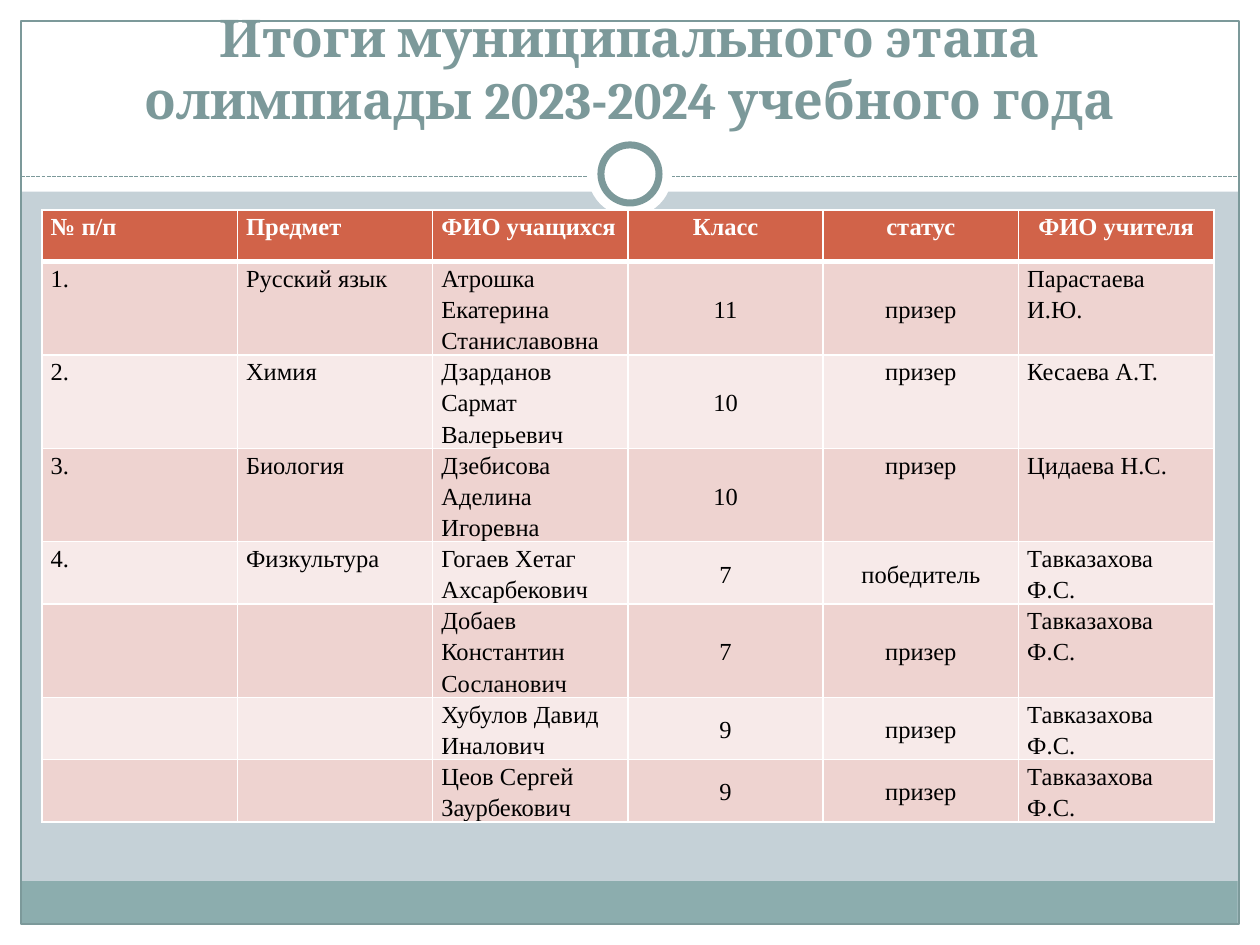
"""Build the slide with the results of the municipal school olympiad."""
from dataclasses import dataclass
from typing import Optional

import pptx
import pptx.dml.color
import pptx.enum.dml
import pptx.enum.shapes
import pptx.enum.text
import pptx.oxml
import pptx.oxml.ns
import pptx.util

Pt = pptx.util.Pt
RGBColor = pptx.dml.color.RGBColor
Shape = pptx.enum.shapes.MSO_SHAPE
Align = pptx.enum.text.PP_ALIGN
Anchor = pptx.enum.text.MSO_ANCHOR

WHITE = RGBColor(0xFF, 0xFF, 0xFF)
BLACK = RGBColor(0x00, 0x00, 0x00)
BACKGROUND = RGBColor(0xC5, 0xD1, 0xD7)
TEAL = RGBColor(0x7C, 0x99, 0x9A)
FOOTER = RGBColor(0x8C, 0xAD, 0xAE)
HEADER = RGBColor(0xD1, 0x63, 0x49)
BANDS = (RGBColor(0xEE, 0xD3, 0xD0), RGBColor(0xF7, 0xEA, 0xE9))

TITLE = "Итоги муниципального этапа олимпиады 2023-2024 учебного года"
HEADINGS = ("№ п/п", "Предмет", "ФИО учащихся", "Класс", "статус", "ФИО учителя")
COLUMN_WIDTH = 111.6
ROW_HEIGHT = 29.5


@dataclass(frozen=True)
class Panel:
    left: float
    top: float
    width: float
    height: float
    fill: Optional[RGBColor] = WHITE
    line_width: float = 0
    preset: Shape = Shape.RECTANGLE


@dataclass(frozen=True)
class Result:
    number: str
    subject: str
    student: str
    grade: str
    status: str
    teacher: str
    status_anchor: Anchor = Anchor.MIDDLE

    def texts(self) -> tuple:
        return (self.number, self.subject, self.student,
                self.grade, self.status, self.teacher)

    def anchors(self) -> tuple:
        return (Anchor.TOP, Anchor.TOP, Anchor.MIDDLE,
                Anchor.MIDDLE, self.status_anchor, Anchor.TOP)


FRAME = (
    Panel(0, 528, 720, 12),
    Panel(0, 0, 720, 109.5),
    Panel(0, 0, 12, 540),
    Panel(708, 0, 12, 540),
    Panel(11.75, 503.5, 695.5, 24.5, FOOTER),
    Panel(12, 12, 696, 516, None, 0.75),
)
RINGS = (
    Panel(336, 75.6, 48, 48, preset=Shape.OVAL),
    Panel(343.4, 82.8, 33.2, 33.2, WHITE, 4, Shape.OVAL),
)
RESULTS = (
    Result("1.", "Русский язык", "Атрошка Екатерина Станиславовна",
           "11", "призер", "Парастаева И.Ю."),
    Result("2.", "Химия", "Дзарданов Сармат Валерьевич",
           "10", "призер", "Кесаева А.Т.", Anchor.TOP),
    Result("3.", "Биология", "Дзебисова Аделина Игоревна",
           "10", "призер", "Цидаева Н.С.", Anchor.TOP),
    Result("4.", "Физкультура", "Гогаев Хетаг Ахсарбекович",
           "7", "победитель", "Тавказахова Ф.С."),
    Result("", "", "Добаев Константин Сосланович", "7", "призер", "Тавказахова Ф.С."),
    Result("", "", "Хубулов Давид Иналович", "9", "призер", "Тавказахова Ф.С."),
    Result("", "", "Цеов Сергей Заурбекович", "9", "призер", "Тавказахова Ф.С."),
)


def draw_panel(page, panel: Panel) -> None:
    shape = page.shapes.add_shape(panel.preset, Pt(panel.left), Pt(panel.top),
                                  Pt(panel.width), Pt(panel.height))
    shape.shadow.inherit = False
    if panel.fill is None:
        shape.fill.background()
    else:
        shape.fill.solid()
        shape.fill.fore_color.rgb = panel.fill
    if panel.line_width:
        shape.line.color.rgb = TEAL
        shape.line.width = Pt(panel.line_width)
    else:
        shape.line.fill.background()


def draw_divider(page) -> None:
    divider = page.shapes.add_connector(pptx.enum.shapes.MSO_CONNECTOR.STRAIGHT,
                                        Pt(12), Pt(100.8), Pt(708), Pt(100.8))
    divider.line.color.rgb = TEAL
    divider.line.width = Pt(0.75)
    divider.line.dash_style = pptx.enum.dml.MSO_LINE.SQUARE_DOT
    properties = divider._element.spPr
    properties.append(properties.makeelement(pptx.oxml.ns.qn("a:effectLst"), {}))


def draw_title(page) -> None:
    title = page.shapes.title
    title.left, title.top, title.width, title.height = Pt(24), Pt(18), Pt(672), Pt(60)
    frame = title.text_frame
    frame.text = TITLE
    frame.word_wrap = True
    frame.auto_size = pptx.enum.text.MSO_AUTO_SIZE.NONE
    frame.vertical_anchor = Anchor.BOTTOM
    para = frame.paragraphs[0]
    para.alignment = Align.CENTER
    para.font.name = "Cambria"
    para.font.size = Pt(29.7)
    para.font.bold = True
    para.font.color.rgb = TEAL
    page.shapes._spTree.append(title._element)


def set_borders(cell, top: float, bottom: float) -> None:
    sides = (("L", 1), ("R", 1), ("T", top), ("B", bottom))
    properties = cell._tc.get_or_add_tcPr()
    for index, (side, width) in enumerate(sides):
        border = pptx.oxml.parse_xml(
            f'<a:ln{side} {pptx.oxml.ns.nsdecls("a")} w="{Pt(width)}">'
            f'<a:solidFill><a:srgbClr val="{WHITE}"/></a:solidFill></a:ln{side}>')
        properties.insert(index, border)


def fill_cell(cell, text: str, fill: RGBColor, color: RGBColor, bold: bool,
              alignment: Align, anchor: Anchor) -> None:
    cell.fill.solid()
    cell.fill.fore_color.rgb = fill
    cell.margin_left = cell.margin_right = Pt(5)
    cell.margin_top = cell.margin_bottom = Pt(0)
    cell.vertical_anchor = anchor
    cell.text = text
    para = cell.text_frame.paragraphs[0]
    para.alignment = alignment
    para.line_spacing = 1.15
    para.font.name = "Times New Roman"
    para.font.size = Pt(14)
    para.font.bold = bold
    para.font.color.rgb = color


def draw_results(page) -> None:
    row_count, column_count = len(RESULTS) + 1, len(HEADINGS)
    table = page.shapes.add_table(row_count, column_count, Pt(24), Pt(120),
                                  Pt(COLUMN_WIDTH * column_count),
                                  Pt(ROW_HEIGHT * row_count)).table
    for column in table.columns:
        column.width = Pt(COLUMN_WIDTH)
    for row in table.rows:
        row.height = Pt(ROW_HEIGHT)
    for column, heading in enumerate(HEADINGS):
        cell = table.cell(0, column)
        alignment = Align.CENTER if column >= 3 else Align.LEFT
        fill_cell(cell, heading, HEADER, WHITE, True, alignment, Anchor.TOP)
        set_borders(cell, top=1, bottom=3)
    for row, result in enumerate(RESULTS, start=1):
        for column, (text, anchor) in enumerate(zip(result.texts(), result.anchors())):
            cell = table.cell(row, column)
            alignment = Align.CENTER if column in (3, 4) else Align.LEFT
            fill_cell(cell, text, BANDS[(row - 1) % 2], BLACK, False, alignment, anchor)
            set_borders(cell, top=3 if row == 1 else 1, bottom=1)


def main() -> None:
    deck = pptx.Presentation()
    deck.slide_width, deck.slide_height = Pt(720), Pt(540)
    page = deck.slides.add_slide(deck.slide_layouts.get_by_name("Title Only"))
    page.background.fill.solid()
    page.background.fill.fore_color.rgb = BACKGROUND
    for panel in FRAME:
        draw_panel(page, panel)
    draw_divider(page)
    for ring in RINGS:
        draw_panel(page, ring)
    draw_title(page)
    draw_results(page)
    deck.save("out.pptx")


if __name__ == "__main__":
    main()
